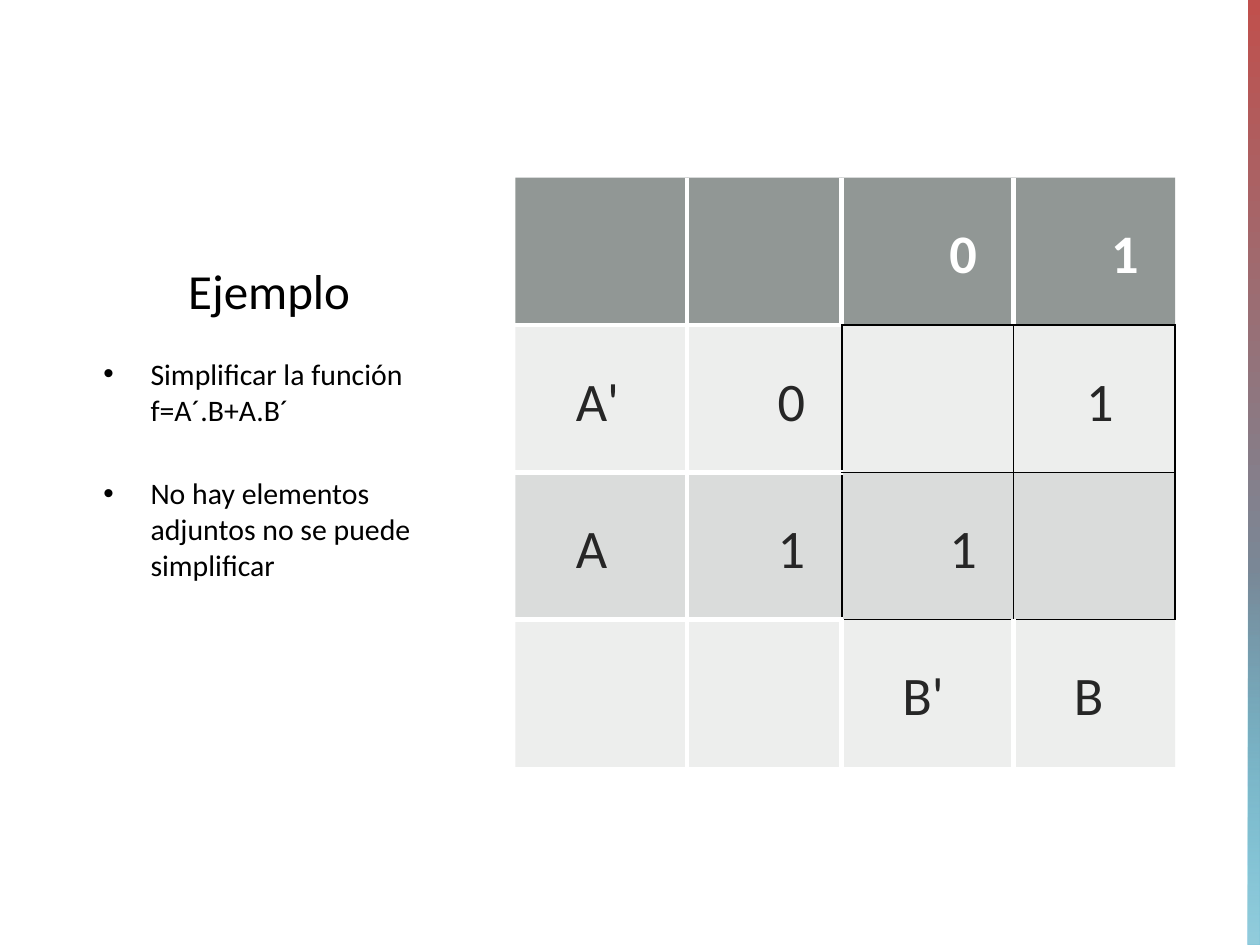
from dataclasses import dataclass

from lxml.etree import SubElement as Sub
from pptx import Presentation as Deck
from pptx.dml.color import RGBColor as Rgb
from pptx.enum.shapes import MSO_SHAPE as Shape
from pptx.enum.text import MSO_ANCHOR as Anchor, MSO_AUTO_SIZE as Fit, PP_ALIGN as Align
from pptx.oxml.ns import qn
from pptx.util import Cm, Pt

BLACK = Rgb(0x00, 0x00, 0x00)
WHITE = Rgb(0xFF, 0xFF, 0xFF)
INK = Rgb(0x26, 0x26, 0x26)
SLATE = Rgb(0x63, 0x6B, 0x68)
GREY = Rgb(0x87, 0x8E, 0x8B)
RED = Rgb(0xC0, 0x50, 0x4D)
TEAL = Rgb(0x4B, 0xAC, 0xC6)
SKY = Rgb(0x93, 0xCD, 0xDD)

FACE = "Calibri"
WIDTHS = [3.46, 3.12, 3.46, 3.26]
HEIGHT = 2.97
GRID = [
    ["", "", "0", "1"],
    ["A'", "0", "", " 1"],
    ["A", "1", "1", ""],
    ["", "", "B'", "B"],
]
RIGHT = {(0, 2), (0, 3), (1, 1), (2, 1), (2, 2)}
CORE = {(1, 2), (1, 3), (2, 2), (2, 3)}
SIDES = {"L": (0, -1), "R": (0, 1), "T": (-1, 0), "B": (1, 0)}
SHADES = [(SLATE, 70), (GREY, 15), (GREY, 30), (GREY, 15)]
BULLETS = [
    ("Simplificar la función f=A´.B+A.B´", 0),
    ("No hay elementos adjuntos no se puede simplificar", 27.5),
]


@dataclass
class Band:
    top: float
    height: float
    start: Rgb
    end: Rgb
    stop: float = 0
    clear: bool = False


BANDS = [
    Band(0, 19.05, RED, TEAL),
    Band(9.8, 9.25, SKY, SKY, 0.19, True),
]


def apply(item, form: dict) -> None:
    for key, value in form.items():
        setattr(item, key, value)


def style(font, size: float, color: Rgb, bold: bool = False) -> None:
    apply(font, {"name": FACE, "size": Pt(size), "bold": bold})
    font.color.rgb = color


def place(shape, left: float, top: float, width: float, height: float) -> None:
    apply(shape, {"left": Cm(left), "top": Cm(top), "width": Cm(width), "height": Cm(height)})


def set_alpha(color, share: int) -> None:
    Sub(color, qn("a:alpha"), val=str(share * 1000))


def draw_title(title) -> None:
    place(title, 1.83, 2.06, 7.19, 4.5)
    frame = title.text_frame
    frame.text = "Ejemplo"
    apply(frame, {"auto_size": Fit.NONE, "vertical_anchor": Anchor.BOTTOM})
    para = frame.paragraphs[0]
    para.alignment = Align.CENTER
    style(para.runs[0].font, 28, BLACK)


def draw_list(body) -> None:
    place(body, 1.83, 7.04, 7.19, 9.58)
    frame = body.text_frame
    frame.text = "\n".join(text for text, gap in BULLETS)
    apply(frame, {"auto_size": Fit.NONE, "vertical_anchor": Anchor.TOP})
    for para, (text, gap) in zip(frame.paragraphs, BULLETS):
        props = para._p.get_or_add_pPr()
        props.set("marL", str(Cm(0.95)))
        props.set("indent", str(Cm(-0.95)))
        Sub(props, qn("a:buFont"), typeface="Arial")
        Sub(props, qn("a:buChar"), char="•")
        para.space_before = Pt(gap)
        style(para.runs[0].font, 17, BLACK)


def draw_band(group, band: Band) -> None:
    rect = group.shapes.add_shape(Shape.RECTANGLE, Cm(25.15), Cm(band.top), Cm(0.25), Cm(band.height))
    rect.shadow.inherit = False
    rect.line.fill.background()
    fill = rect.fill
    fill.gradient()
    fill.gradient_angle = 270
    ends = [(band.start, band.stop), (band.end, 1)]
    for stop, (color, spot) in zip(fill.gradient_stops, ends):
        stop.color.rgb = color
        stop.position = spot
    if band.clear:
        set_alpha(next(rect._element.iter(qn("a:srgbClr"))), 0)


def draw_edges(cell, row: int, col: int) -> None:
    props = cell._tc.get_or_add_tcPr()
    for spot, (side, (down, over)) in enumerate(SIDES.items()):
        near = (row + down, col + over)
        inner = near[0] in range(len(GRID)) and near[1] in range(len(WIDTHS))
        dark = (row, col) in CORE or near in CORE
        line = Sub(props, qn(f"a:ln{side}"), w=str(Pt(1 if dark else 3)))
        if dark or inner:
            paint = Sub(line, qn("a:solidFill"))
            Sub(paint, qn("a:srgbClr"), val=str(BLACK if dark else WHITE))
        else:
            Sub(line, qn("a:noFill"))
        props.insert(spot, line)


def draw_cell(cell, row: int, col: int) -> None:
    color, share = SHADES[row]
    cell.fill.solid()
    cell.fill.fore_color.rgb = color
    set_alpha(next(cell._tc.iter(qn("a:srgbClr"))), share)
    draw_edges(cell, row, col)
    text = GRID[row][col]
    if text:
        inset = Cm(0.74)
        apply(cell, {
            "text": text, "vertical_anchor": Anchor.BOTTOM, "margin_left": Cm(1.22),
            "margin_right": inset, "margin_top": inset, "margin_bottom": inset,
        })
        para = cell.text_frame.paragraphs[0]
        para.alignment = Align.RIGHT if (row, col) in RIGHT else Align.LEFT
        style(para.runs[0].font, 31, INK if row else WHITE, row == 0)


def draw_table(slide) -> None:
    count = len(GRID)
    table = slide.shapes.add_table(
        count, len(WIDTHS), Cm(10.39), Cm(3.58), Cm(sum(WIDTHS)), Cm(HEIGHT * count)
    ).table
    apply(table, {"first_row": False, "horz_banding": False})
    for col, width in zip(table.columns, WIDTHS):
        col.width = Cm(width)
    for row, line in enumerate(table.rows):
        line.height = Cm(HEIGHT)
        for col, cell in enumerate(line.cells):
            draw_cell(cell, row, col)


def main() -> None:
    deck = Deck()
    apply(deck, {"slide_width": Cm(25.4), "slide_height": Cm(19.05)})
    slide = deck.slides.add_slide(deck.slide_layouts[1])
    draw_title(slide.shapes.title)
    draw_list(slide.placeholders[1])
    group = slide.shapes.add_group_shape()
    for band in BANDS:
        draw_band(group, band)
    draw_table(slide)
    deck.save("out.pptx")


if __name__ == "__main__":
    main()
